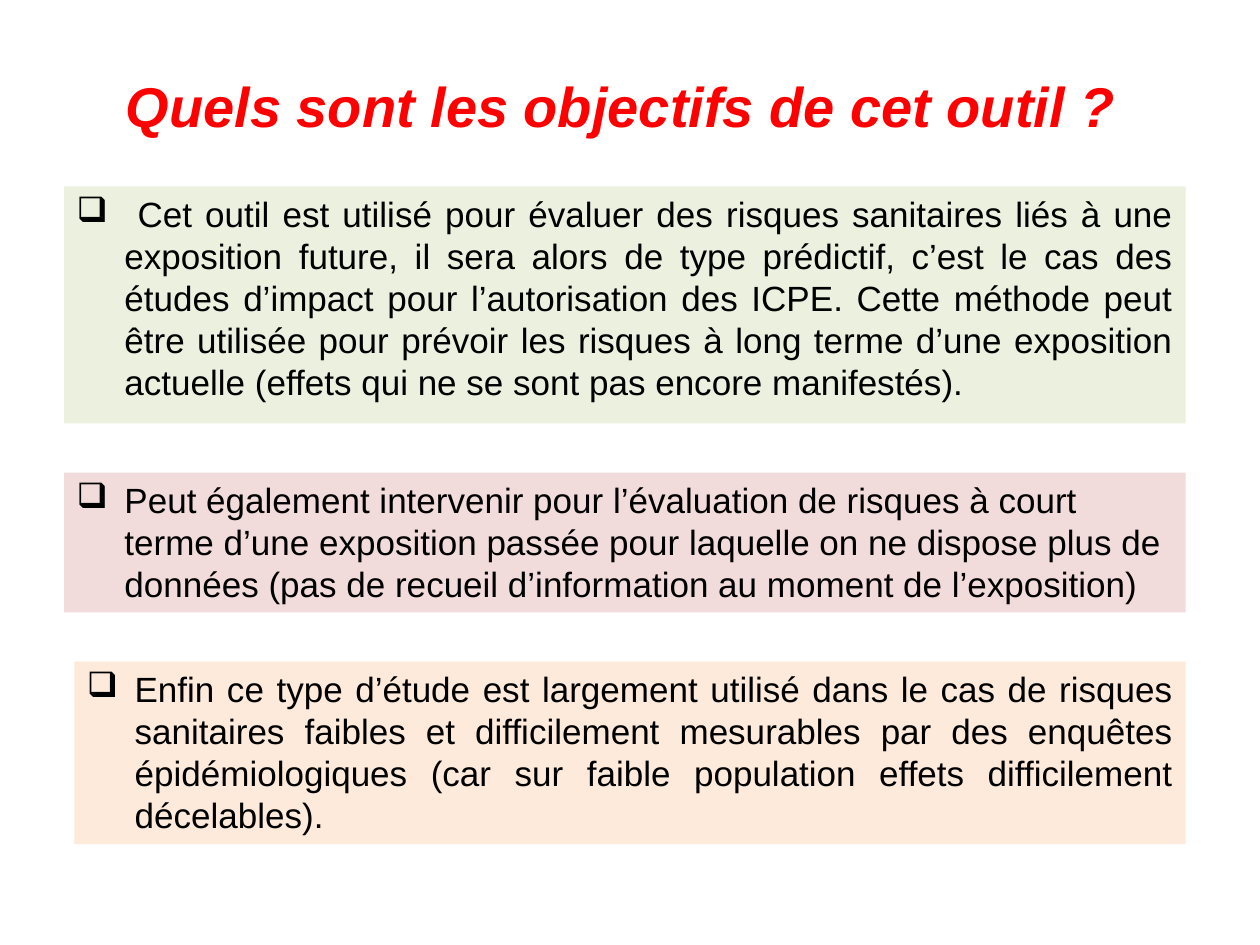
from lxml import etree
from pptx import Presentation
from pptx.dml.color import RGBColor
from pptx.enum import text
from pptx.oxml.ns import qn
from pptx.util import Inches, Pt

HUES = {"title": "FF0000", "body": "000000", "green": "EBF1DE",
        "rose": "F2DCDB", "peach": "FDEADA"}
ALIGN = text.PP_ALIGN
RIGHT = 9.41
INDENT = 0.38

TITLE = "Quels sont les objectifs de cet outil ?"
# left, top, height, fill, alignment, wording
GOALS = [
    (0.51, 1.48, 1.88, "green", ALIGN.JUSTIFY,
     " Cet outil est utilisé pour évaluer des risques sanitaires liés à une "
     "exposition future, il sera alors de type prédictif, c’est le cas des "
     "études d’impact pour l’autorisation des ICPE. Cette méthode peut être "
     "utilisée pour prévoir les risques à long terme d’une exposition "
     "actuelle (effets qui ne se sont pas encore manifestés)."),
    (0.51, 3.75, 1.11, "rose", ALIGN.LEFT,
     "Peut également intervenir pour l’évaluation de risques à court terme "
     "d’une exposition passée pour laquelle on ne dispose plus de données "
     "(pas de recueil d’information au moment de l’exposition)"),
    (0.59, 5.25, 1.45, "peach", ALIGN.JUSTIFY,
     "Enfin ce type d’étude est largement utilisé dans le cas de risques "
     "sanitaires faibles et difficilement mesurables par des enquêtes "
     "épidémiologiques (car sur faible population effets difficilement "
     "décelables)."),
]


def write(shape, words, size, hue, align, anchor, bold=False, italic=False,
          bullet=None):
    frame = shape.text_frame
    frame.word_wrap = True
    frame.auto_size = text.MSO_AUTO_SIZE.NONE
    frame.vertical_anchor = anchor
    para = frame.paragraphs[0]
    para.alignment = align
    if bullet:
        props = para._p.get_or_add_pPr()
        props.set("marL", str(Inches(INDENT)))
        props.set("indent", str(-Inches(INDENT)))
        etree.SubElement(props, qn("a:buChar")).set("char", bullet)
    run = para.add_run()
    run.text = words
    font = run.font
    font.name, font.size = "Arial", Pt(size)
    font.bold, font.italic = bold, italic
    font.color.rgb = RGBColor.from_string(HUES[hue])


deck = Presentation()
deck.slide_width, deck.slide_height = Inches(10), Inches(7.5)
slide = deck.slides.add_slide(deck.slide_layouts[5])

title = slide.shapes.title
title.left, title.top = Inches(0.43), Inches(0.21)
title.width, title.height = Inches(9), Inches(1.25)
write(title, TITLE, 32, "title", ALIGN.CENTER, text.MSO_ANCHOR.MIDDLE,
      bold=True, italic=True)

for left, top, height, fill, align, words in GOALS:
    box = slide.shapes.add_textbox(Inches(left), Inches(top),
                                   Inches(RIGHT - left), Inches(height))
    box.fill.solid()
    box.fill.fore_color.rgb = RGBColor.from_string(HUES[fill])
    write(box, words, 20, "body", align, text.MSO_ANCHOR.TOP, bullet="❑")

deck.save("out.pptx")
